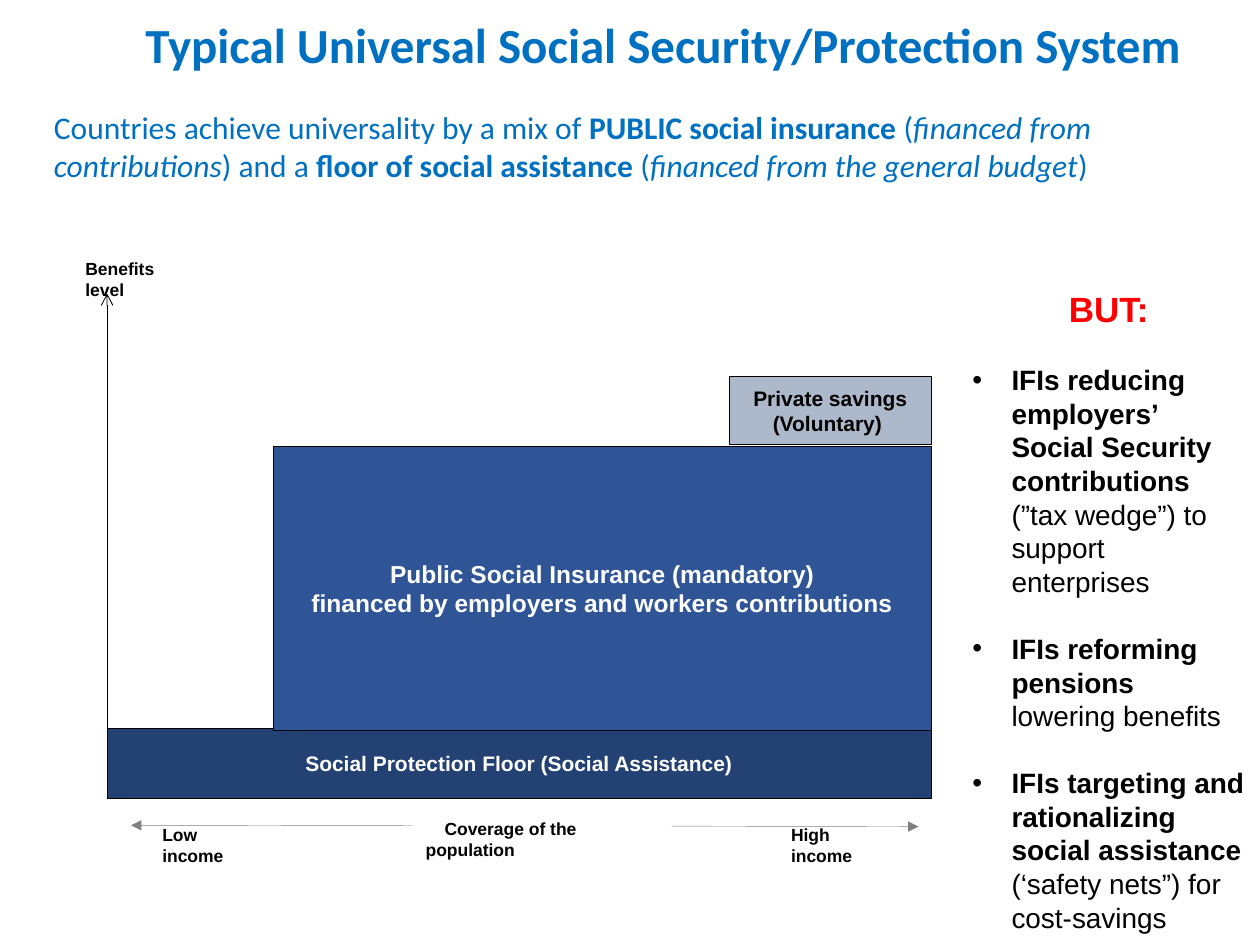
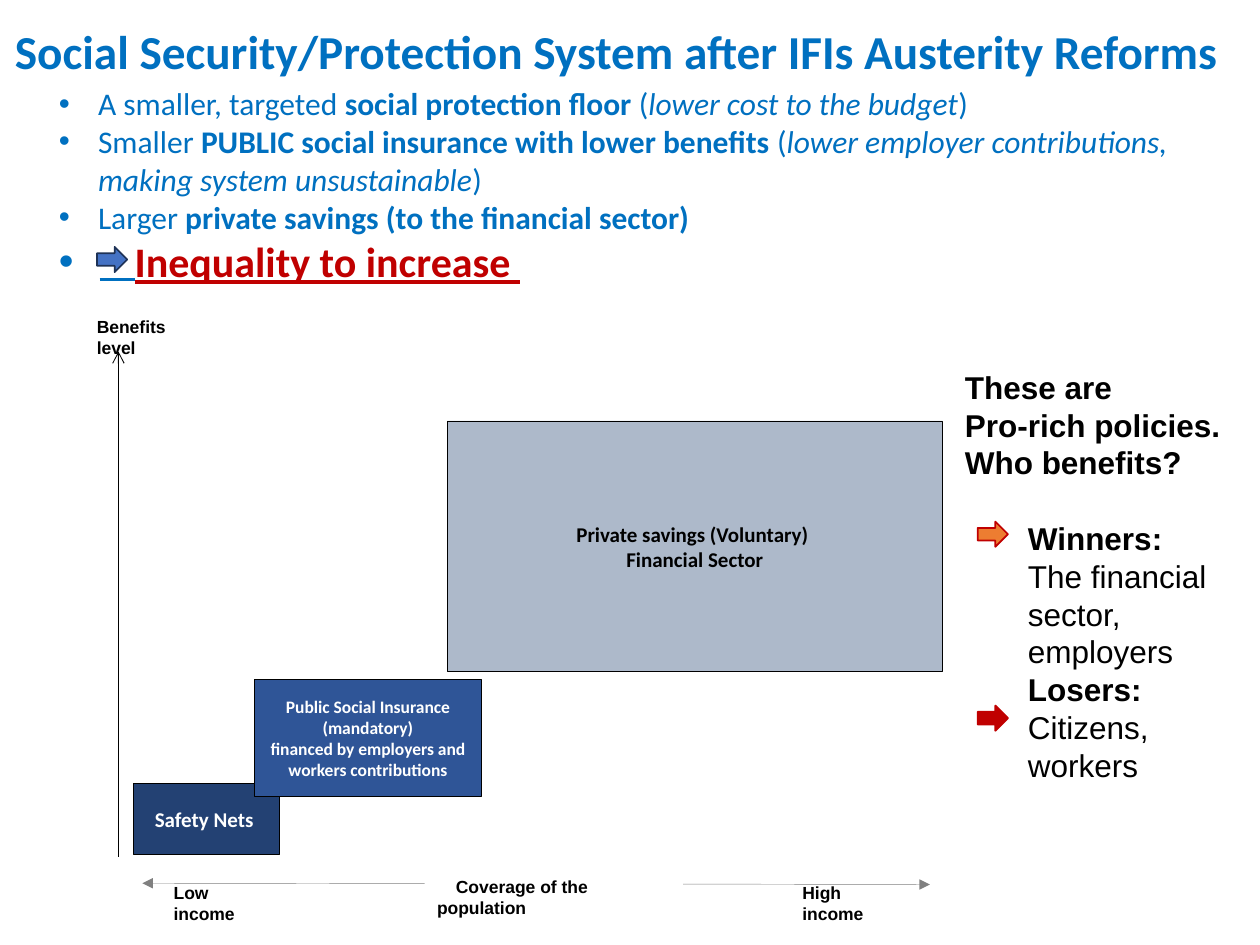
"""Build two slides comparing social protection systems before and after austerity reforms."""
import pptx
import pptx.dml.color
import pptx.enum.shapes
import pptx.enum.text
import pptx.oxml
import pptx.oxml.ns
import pptx.util

Inches, Pt = pptx.util.Inches, pptx.util.Pt
SHAPES = pptx.enum.shapes.MSO_SHAPE
CENTER = pptx.enum.text.PP_ALIGN.CENTER
MIDDLE = pptx.enum.text.MSO_ANCHOR.MIDDLE

COLORS = {
    "heading": "0070C0", "black": "000000", "white": "FFFFFF", "axis": "808080",
    "floor": "234173", "insurance": "2F5597", "savings": "ADB9CA",
    "but": "FF0000", "red": "C00000", "orange": "ED7D31",
    "arrow": "4472C4", "arrow_edge": "1E3256",
}
HANGING = 0.31
LINE_PITCH = 1.2
INSURANCE = ["Public Social Insurance (mandatory)",
             "financed by employers and workers contributions"]

SLIDES = [
    {
        "title": ("Typical Universal Social Security/Protection System", (0.64, 0, 9.24, 0.69), 28),
        "intro_box": (0.33, 0.81, 9.5, 0.71),
        "intro": [
            {"runs": [("Countries achieve universality by a mix of ", ""),
                      ("PUBLIC social insurance", "b"), (" (", ""),
                      ("financed from contributions", "i"), (") and a ", ""),
                      ("floor of social assistance", "b"), (" (", ""),
                      ("financed from the general budget", "i"), (")", "")]},
        ],
        "chart_offset": (0, 0),
        "blocks": [
            (["Social Protection Floor (Social Assistance)"], "floor", (0.85, 5.78, 6.54, 0.56), 12),
            (INSURANCE, "insurance", (2.17, 3.54, 5.22, 2.26), 14),
            (["Private savings (Voluntary) "], "savings", (5.79, 2.99, 1.6, 0.54), 12),
        ],
        "block_font": "Arial",
        "side_box": (7.62, 2.23, 2.36, 5.28),
        "side_size": 16,
        "side": [
            {"runs": [("BUT:", "b")], "size": 20, "color": "but", "center": True},
            {"runs": [("IFIs reducing employers’ Social Security contributions ", "b"),
                      ("(”tax wedge”) to support enterprises", "")], "bullet": True, "gap": True},
            {"runs": [("IFIs reforming pensions ", "b"), ("lowering benefits", "")],
             "bullet": True, "gap": True},
            {"runs": [("IFIs targeting and rationalizing social assistance ", "b"),
                      ("(‘safety nets”) for cost-savings", "")], "bullet": True, "gap": True},
        ],
        "arrows": [],
        "underlines": [],
    },
    {
        "title": ("Social Security/Protection System after IFIs Austerity Reforms", (0, 0.06, 9.78, 0.69), 27),
        "intro_box": (0.37, 0.62, 9.5, 2.32),
        "intro": [
            {"runs": [("A smaller, targeted ", ""), ("social protection floor", "b"), (" (", ""),
                      ("lower cost to the budget", "i"), (")", "")], "bullet": True},
            {"runs": [("Smaller ", ""), ("PUBLIC social insurance with lower benefits", "b"), (" (", ""),
                      ("lower employer contributions, making system unsustainable", "i"),
                      (")", "")], "bullet": True},
            {"runs": [("Larger ", ""), ("private savings (to the financial sector)", "b")],
             "bullet": True},
            {"runs": [("Inequality to increase ", "bu")], "bullet": True, "indent": 0.6,
             "size": 24, "color": "red"},
        ],
        "chart_offset": (0.09, 0.46),
        "blocks": [
            (["Safety Nets "], "floor", (1.06, 6.22, 1.16, 0.56), 12),
            (INSURANCE, "insurance", (2.02, 5.39, 1.8, 0.93), 10),
            (["Private savings (Voluntary) ", "Financial Sector"], "savings", (3.55, 3.34, 3.93, 1.99), 12),
        ],
        "block_font": "Calibri",
        "side_box": (7.56, 2.87, 2.23, 3.43),
        "side_size": 18,
        "side": [
            {"runs": [("These are", "b")]},
            {"runs": [("Pro-rich policies.", "b")]},
            {"runs": [("Who benefits?", "b")]},
            {"runs": [("Winners:", "b")], "indent": 0.5, "gap": True},
            {"runs": [("The financial sector, employers", "")], "indent": 0.5},
            {"runs": [("Losers:", "b")], "indent": 0.5},
            {"runs": [("Citizens, workers", "")], "indent": 0.5},
        ],
        "arrows": [(7.76, 4.14, "orange", "red"), (7.76, 5.6, "red", "red"),
                   (0.77, 1.96, "arrow", "arrow_edge")],
        "underlines": [((0.79, 2.22), (1.07, 2.22))],
    },
]

INCOME_AXIS = ((1.04, 6.55), (7.29, 6.56))
BENEFITS_AXIS = ((0.85, 2.33), (0.85, 6.34))
AXIS_LABELS = [
    ("Low income", (1.19, 6.49, 0.83, 0.26)),
    ("High income", (6.18, 6.49, 0.86, 0.26)),
    ("Benefits level", (0.58, 2, 0.9, 0.26)),
]
COVERAGE = ("Coverage of the population", (3.28, 6.44, 2.05, 0.26), 0.15)


def rgb(name):
    return pptx.dml.color.RGBColor.from_string(COLORS[name])


def add_xml(parent, tag, **attributes):
    child = pptx.oxml.parse_xml(
        f'<a:{tag} xmlns:a="http://schemas.openxmlformats.org/drawingml/2006/main"/>')
    for key, value in attributes.items():
        child.set(key, value)
    parent.append(child)
    return child


def shift(box, offset):
    return (box[0] + offset[0], box[1] + offset[1], *box[2:])


def set_indent(paragraph, left, first):
    properties = paragraph._p.get_or_add_pPr()
    properties.set("marL", str(Inches(left)))
    properties.set("indent", str(Inches(first)))
    return properties


def write(frame, paragraphs, font, size, color, center=False):
    frame.word_wrap = True
    for index, entry in enumerate(paragraphs):
        paragraph = frame.paragraphs[0] if index == 0 else frame.add_paragraph()
        indent = entry.get("indent", HANGING if entry.get("bullet") else 0)
        if entry.get("bullet"):
            properties = set_indent(paragraph, indent, -indent)
            bullet_color = add_xml(properties, "buClr")
            add_xml(bullet_color, "srgbClr", val=COLORS[color])
            add_xml(properties, "buSzPts", val=str(size * 100))
            add_xml(properties, "buFont", typeface="Arial")
            add_xml(properties, "buChar", char="•")
        elif indent or "first" in entry:
            set_indent(paragraph, indent, entry.get("first", 0))
        if entry.get("gap"):
            paragraph.space_before = Pt(size * LINE_PITCH)
        if center or entry.get("center"):
            paragraph.alignment = CENTER
        for text, style in entry["runs"]:
            run = paragraph.add_run()
            run.text = text
            run.font.name = font
            run.font.size = Pt(entry.get("size", size))
            run.font.color.rgb = rgb(entry.get("color", color))
            run.font.bold = "b" in style
            run.font.italic = "i" in style
            run.font.underline = "u" in style


def add_text(slide, box, paragraphs, font, size, color):
    frame = slide.shapes.add_textbox(*map(Inches, box)).text_frame
    write(frame, paragraphs, font, size, color)
    return frame


def add_title(slide, text, box, size):
    frame = add_text(slide, box, [{"runs": [(text, "b")], "center": True}], "Calibri", size, "heading")
    frame.margin_left = frame.margin_right = 0
    frame.vertical_anchor = MIDDLE


def add_preset(slide, preset, box, fill, edge=None, width=0.25):
    shape = slide.shapes.add_shape(preset, *map(Inches, box))
    shape.shadow.inherit = False
    shape.fill.solid()
    shape.fill.fore_color.rgb = rgb(fill)
    if edge:
        shape.line.color.rgb = rgb(edge)
        shape.line.width = Pt(width)
    else:
        shape.line.fill.background()
    return shape


def add_line(slide, start, end, color, width, **heads):
    line = slide.shapes.add_connector(
        pptx.enum.shapes.MSO_CONNECTOR.STRAIGHT, *map(Inches, (*start, *end)))
    line.line.color.rgb = rgb(color)
    line.line.width = Pt(width)
    outline = line.line._get_or_add_ln()
    for tag, kind in heads.items():
        add_xml(outline, tag, type=kind)
    add_xml(line._element.spPr, "effectLst")


def add_chart_frame(slide, offset):
    add_line(slide, *(shift(point, offset) for point in INCOME_AXIS), "axis", 0.25,
             headEnd="triangle", tailEnd="triangle")
    add_line(slide, *(shift(point, offset) for point in BENEFITS_AXIS), "black", 0.5,
             headEnd="arrow")
    for text, box in AXIS_LABELS:
        add_text(slide, shift(box, offset), [{"runs": [(text, "b")]}], "Arial", 10, "black")
    text, box, first = COVERAGE
    coverage = add_preset(slide, SHAPES.RECTANGLE, shift(box, offset), "white")
    coverage.text_frame.vertical_anchor = pptx.enum.text.MSO_ANCHOR.TOP
    write(coverage.text_frame, [{"runs": [(text, "b")], "first": first}], "Arial", 10, "black")
    coverage.text_frame.paragraphs[0].alignment = pptx.enum.text.PP_ALIGN.LEFT


def add_block(slide, lines, fill, box, size, font):
    block = add_preset(slide, SHAPES.RECTANGLE, box, fill, "black")
    block.text_frame.vertical_anchor = MIDDLE
    color = "black" if fill == "savings" else "white"
    write(block.text_frame, [{"runs": [(line, "b")]} for line in lines], font, size, color, center=True)


def build_slide(deck, content):
    slide = deck.slides.add_slide(deck.slide_layouts[6])
    add_title(slide, *content["title"])
    add_text(slide, content["intro_box"], content["intro"], "Calibri", 18, "heading")
    add_chart_frame(slide, content["chart_offset"])
    for block in content["blocks"]:
        add_block(slide, *block, content["block_font"])
    add_text(slide, content["side_box"], content["side"], "Arial", content["side_size"], "black")
    for left, top, fill, edge in content["arrows"]:
        add_preset(slide, SHAPES.RIGHT_ARROW, (left, top, 0.24, 0.2), fill, edge, 1)
    for start, end in content["underlines"]:
        add_line(slide, start, end, "heading", 1.5)


def main():
    deck = pptx.Presentation()
    deck.slide_width, deck.slide_height = Inches(10), Inches(7.5)
    for content in SLIDES:
        build_slide(deck, content)
    deck.save("out.pptx")


if __name__ == "__main__":
    main()
